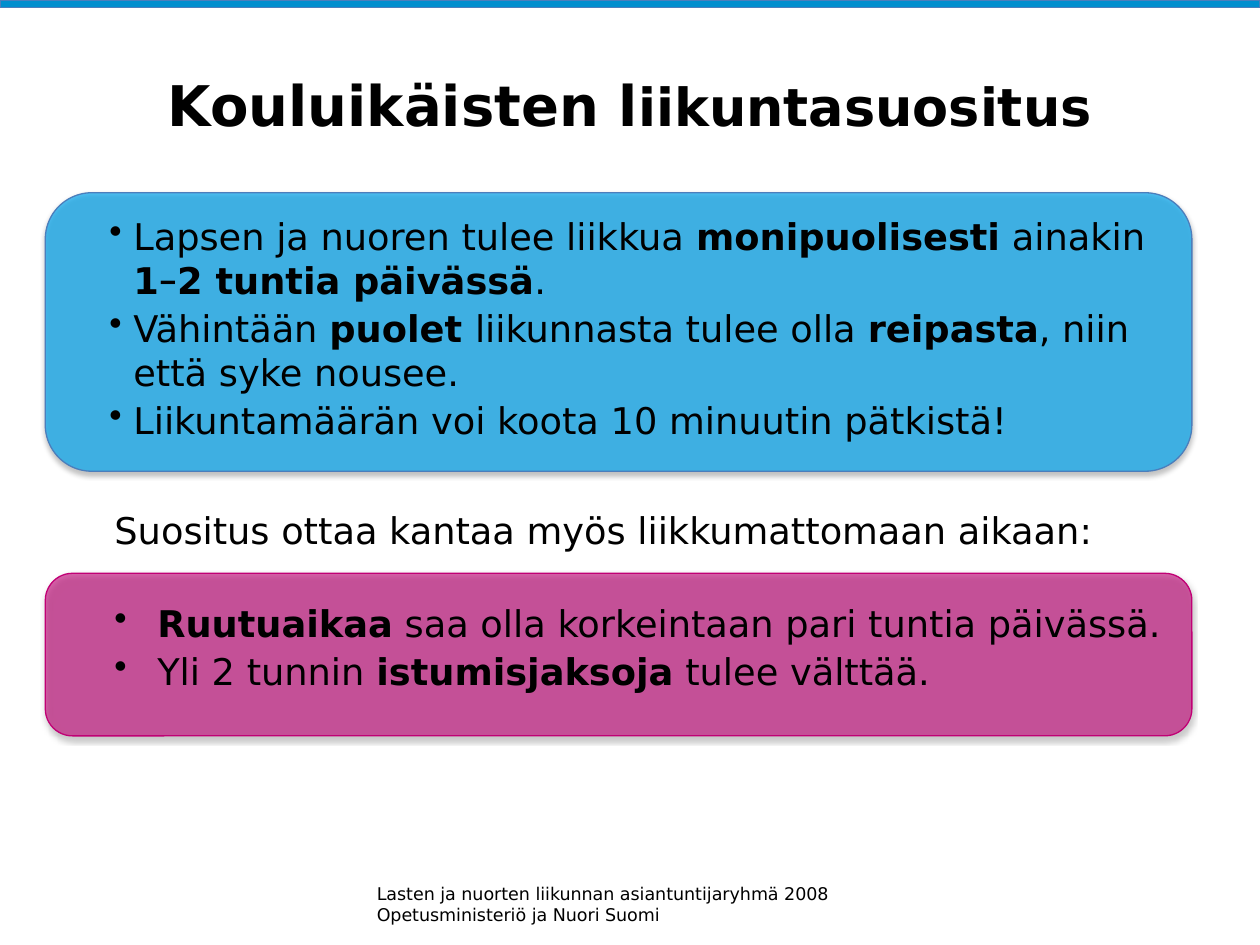
from dataclasses import dataclass

from lxml import etree
from pptx import Presentation
from pptx.dml.color import RGBColor
from pptx.enum.shapes import MSO_SHAPE
from pptx.enum.text import MSO_ANCHOR, PP_ALIGN
from pptx.oxml.ns import qn
from pptx.util import Inches, Pt

RECTANGLE, ROUNDED = MSO_SHAPE.RECTANGLE, MSO_SHAPE.ROUNDED_RECTANGLE
TOP, MIDDLE = MSO_ANCHOR.TOP, MSO_ANCHOR.MIDDLE
LEFT, CENTER = PP_ALIGN.LEFT, PP_ALIGN.CENTER


@dataclass(frozen=True)
class Theme:
    font: str = "DejaVu Sans"
    symbol_font: str = "Calibri"
    ink: str = "000000"
    stripe: str = "008ECE"
    blue: str = "00A7F2"
    blue_line: str = "4B7EBC"
    pink: str = "C10075"
    title: float = 32
    title_end: float = 30
    body: float = 21
    source: float = 10


THEME = Theme()


@dataclass(frozen=True)
class Span:
    text: str
    bold: bool = False
    size: float = 0
    font: str = THEME.font


def bold(text, **style):
    return Span(text, bold=True, **style)


def add_bullet(para, indent):
    properties = para._p.get_or_add_pPr()
    properties.set("marL", str(Inches(indent)))
    properties.set("indent", str(-Inches(indent)))
    etree.SubElement(properties, qn("a:buChar")).set("char", "•")


def add_text(page, area, paragraphs, size=THEME.body, align=LEFT, anchor=TOP,
             indent=0, wrap=True, padded=True):
    """Write paragraphs, each a list of spans; an indent makes them bullets."""
    box = page.shapes.add_textbox(*map(Inches, area))
    frame = box.text_frame
    frame.word_wrap = wrap
    frame.vertical_anchor = anchor
    if not padded:
        frame.margin_left = frame.margin_right = 0
        frame.margin_top = frame.margin_bottom = 0
    for number, spans in enumerate(paragraphs):
        para = frame.add_paragraph() if number else frame.paragraphs[0]
        para.alignment = align
        if number and indent:
            para.space_before = Pt(2)
        if indent:
            add_bullet(para, indent)
        for span in spans:
            run = para.add_run()
            run.text = span.text
            run.font.name = span.font
            run.font.size = Pt(span.size or size)
            run.font.bold = span.bold
            run.font.color.rgb = RGBColor.from_string(THEME.ink)


def add_soft_shadow(shape):
    effects = shape._element.spPr.find(qn("a:effectLst"))
    shadow = etree.SubElement(effects, qn("a:outerShdw"), blurRad=str(Pt(3.1)),
                              dist=str(Pt(1.8)), dir="5400000", rotWithShape="0")
    color = etree.SubElement(shadow, qn("a:srgbClr"), val=THEME.ink)
    etree.SubElement(color, qn("a:alpha"), val="35000")


def add_panel(page, area, kind, fill, line, opacity=100):
    """Add a filled shape; a translucent one also casts a soft shadow."""
    panel = page.shapes.add_shape(kind, *map(Inches, area))
    panel.shadow.inherit = False
    panel.fill.solid()
    panel.fill.fore_color.rgb = RGBColor.from_string(fill)
    panel.line.color.rgb = RGBColor.from_string(line)
    panel.line.width = Pt(0.75)
    if opacity < 100:
        color = panel._element.spPr.find(qn("a:solidFill"))[0]
        etree.SubElement(color, qn("a:alpha"), val=str(opacity * 1000))
        add_soft_shadow(panel)


def add_header(page, area):
    left, top, width, height = area
    add_panel(page, (left, top, width, 0.06), RECTANGLE, THEME.stripe, THEME.blue_line)
    add_text(page, (left + 0.5, top + 0.28, width - 1, height - 0.28),
             [[bold("Kouluikäisten l"), bold("iikuntasuositus", size=THEME.title_end)]],
             size=THEME.title, align=CENTER, anchor=MIDDLE)


def add_activity_panel(page, area):
    left, top, width, height = area
    add_panel(page, area, ROUNDED, THEME.blue, THEME.blue_line, opacity=68)
    add_text(page, (left + 0.41, top + 0.12, width - 0.59, height - 0.24), [
        [Span("Lapsen ja nuoren tulee liikkua "), bold("monipuolisesti"),
         Span(" ainakin "), bold("1"), bold("−", font=THEME.symbol_font),
         bold("2 tuntia päivässä"), Span(".")],
        [Span("Vähintään "), bold("puolet "), Span("liikunnasta tulee olla "),
         bold("reipasta"), Span(", niin että syke nousee.")],
        [Span("Liikuntamäärän voi koota 10 minuutin pätkistä!")],
    ], indent=0.19)


def add_sitting_panel(page, area):
    left, top, width, height = area
    add_panel(page, area, ROUNDED, THEME.pink, THEME.pink, opacity=60)
    add_text(page, (left + 0.45, top + 0.17, width - 0.35, height - 0.34), [
        [bold("Ruutuaikaa"), Span(" saa olla korkeintaan pari tuntia päivässä.")],
        [Span("Yli 2 tunnin "), bold("istumisjaksoja"), Span(" tulee välttää.")],
    ], indent=0.34)


def main():
    deck = Presentation()
    deck.slide_width, deck.slide_height = Inches(10), Inches(7.5)
    page = deck.slides.add_slide(deck.slide_layouts[6])
    add_header(page, (0, 0, 10, 1.37))
    add_activity_panel(page, (0.36, 1.53, 9.1, 2.21))
    add_text(page, (0.81, 3.98, 8.75, 0.45),
             [[Span("Suositus ottaa kantaa myös liikkumattomaan aikaan:")]])
    add_sitting_panel(page, (0.36, 4.55, 9.1, 1.29))
    add_text(page, (2.99, 7.01, 3.68, 0.34),
             [[Span("Lasten ja nuorten liikunnan asiantuntijaryhmä 2008")],
              [Span("Opetusministeriö ja Nuori Suomi")]],
             size=THEME.source, wrap=False, padded=False)
    deck.save("out.pptx")


if __name__ == "__main__":
    main()
